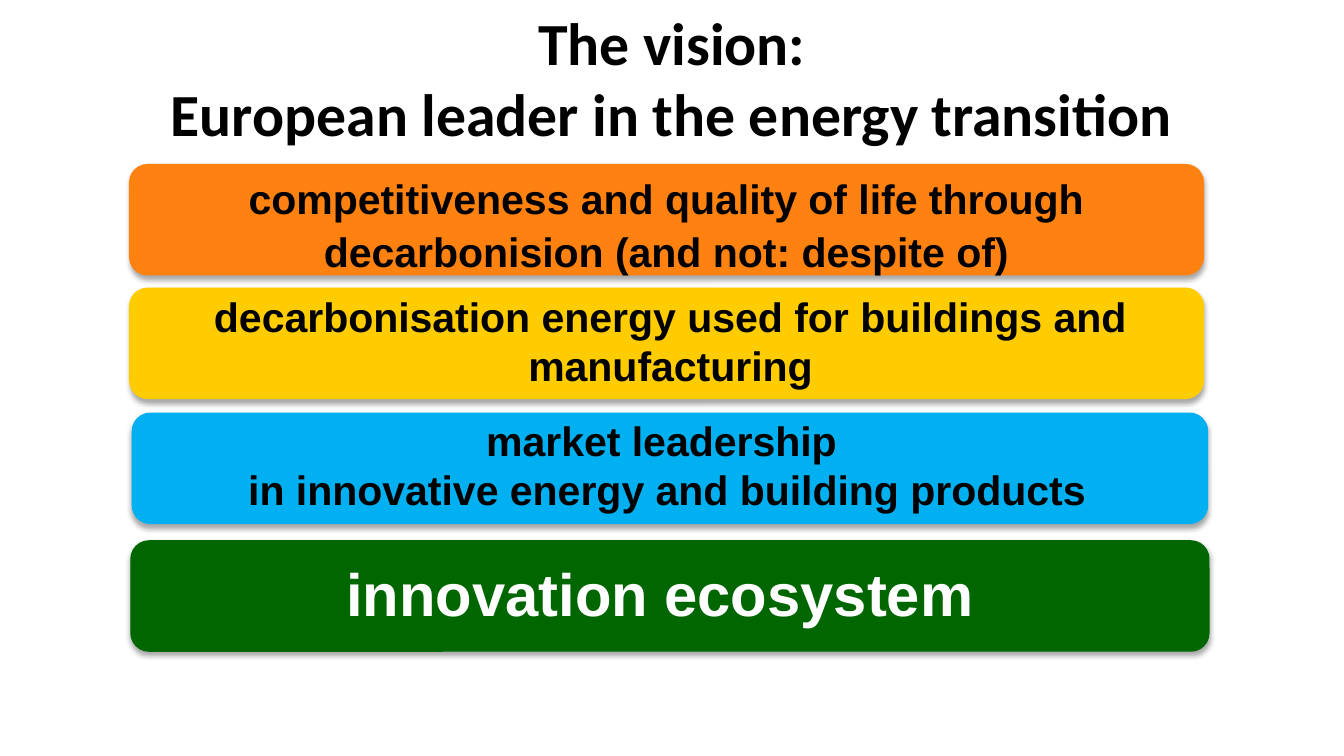
from dataclasses import dataclass

from lxml.etree import SubElement
from pptx import Presentation
from pptx.dml.color import RGBColor
from pptx.enum.shapes import MSO_SHAPE
from pptx.enum.text import MSO_ANCHOR, MSO_AUTO_SIZE, PP_ALIGN
from pptx.oxml.ns import qn
from pptx.util import Inches, Pt


@dataclass(frozen=True)
class Theme:
    ink: str = "000000"
    light: str = "FFFFFF"
    orange: str = "FF8211"
    yellow: str = "FFCC00"
    blue: str = "00B0F0"
    green: str = "006600"
    title_font: str = "Calibri"
    band_font: str = "Arial"
    large: int = 32
    medium: int = 22
    exact_spacing: float = 28.4


THEME = Theme()
PAGE_WIDTH = 10
PAGE_HEIGHT = PAGE_WIDTH * 9 / 16
BAND_HEIGHT = 0.83


@dataclass(frozen=True)
class Band:
    box: tuple  # left, top, width
    fill: str
    lines: tuple
    text_shift: tuple  # text offset from the band's left and top
    text_height: float
    size: int = THEME.medium
    color: str = THEME.ink
    spacing: float | None = None
    margin: float = 0


BANDS = (
    Band((0.96, 1.22, 8), THEME.orange,
         ("competitiveness and quality of life through decarbonision (and not: despite of)",),
         (0, 0.04), 0.79, spacing=THEME.exact_spacing),
    Band((0.96, 2.14, 8), THEME.yellow,
         ("decarbonisation energy used for buildings and manufacturing",),
         (0.03, 0.03), 0.74),
    Band((0.98, 3.07, 8.01), THEME.blue,
         ("market leadership ", "in innovative energy and building products"),
         (-0.02, 0.02), 0.74),
    Band((0.97, 4.02, 8.03), THEME.green, ("innovation ecosystem ",),
         (-0.01, 0.21), 0.49, THEME.large, THEME.light, THEME.exact_spacing, 0.05),
)


def write_centred(frame, lines, font, size, color):
    """Write the lines as one bold centred paragraph with line breaks."""
    para = frame.paragraphs[0]
    para.alignment = PP_ALIGN.CENTER
    for index, line in enumerate(lines):
        if index:
            para.add_line_break()
        span = para.add_run()
        span.text = line
        span.font.name = font
        span.font.size = Pt(size)
        span.font.bold = True
        span.font.color.rgb = RGBColor.from_string(color)
    return para


def add_soft_shadow(shape):
    shape.shadow.inherit = False
    effects = shape._element.spPr.find(qn("a:effectLst"))
    shadow = SubElement(effects, qn("a:outerShdw"), blurRad=str(Pt(3.1)),
                        dist=str(Pt(1.8)), dir="5400000", rotWithShape="0")
    color = SubElement(shadow, qn("a:srgbClr"), val=THEME.ink)
    SubElement(color, qn("a:alpha"), val="35000")


def add_title(page, left, top, width, height):
    title = page.shapes.title
    title.left, title.top = Inches(left), Inches(top)
    title.width, title.height = Inches(width), Inches(height)
    frame = title.text_frame
    frame.auto_size = MSO_AUTO_SIZE.NONE
    frame.vertical_anchor = MSO_ANCHOR.MIDDLE
    write_centred(frame, ("The vision:", "European leader in the energy transition"),
                  THEME.title_font, THEME.large, THEME.ink)


def add_band(page, band):
    left, top, width = band.box
    group = page.shapes.add_group_shape()
    bar = group.shapes.add_shape(MSO_SHAPE.ROUNDED_RECTANGLE, Inches(left), Inches(top),
                                 Inches(width), Inches(BAND_HEIGHT))
    bar.fill.solid()
    bar.fill.fore_color.rgb = RGBColor.from_string(band.fill)
    bar.line.fill.background()
    add_soft_shadow(bar)

    shift_x, shift_y = band.text_shift
    label = group.shapes.add_textbox(Inches(left + shift_x), Inches(top + shift_y),
                                     Inches(width), Inches(band.text_height))
    frame = label.text_frame
    frame.word_wrap = True
    frame.auto_size = MSO_AUTO_SIZE.SHAPE_TO_FIT_TEXT
    frame.margin_top = frame.margin_bottom = Inches(band.margin)
    para = write_centred(frame, band.lines, THEME.band_font, band.size, band.color)
    if band.spacing:
        para.line_spacing = Pt(band.spacing)


def main():
    deck = Presentation()
    deck.slide_width, deck.slide_height = Inches(PAGE_WIDTH), Inches(PAGE_HEIGHT)
    page = deck.slides.add_slide(deck.slide_layouts[5])
    add_title(page, 0, 0.08, PAGE_WIDTH, 0.99)
    for band in BANDS:
        add_band(page, band)
    deck.save("out.pptx")


if __name__ == "__main__":
    main()
